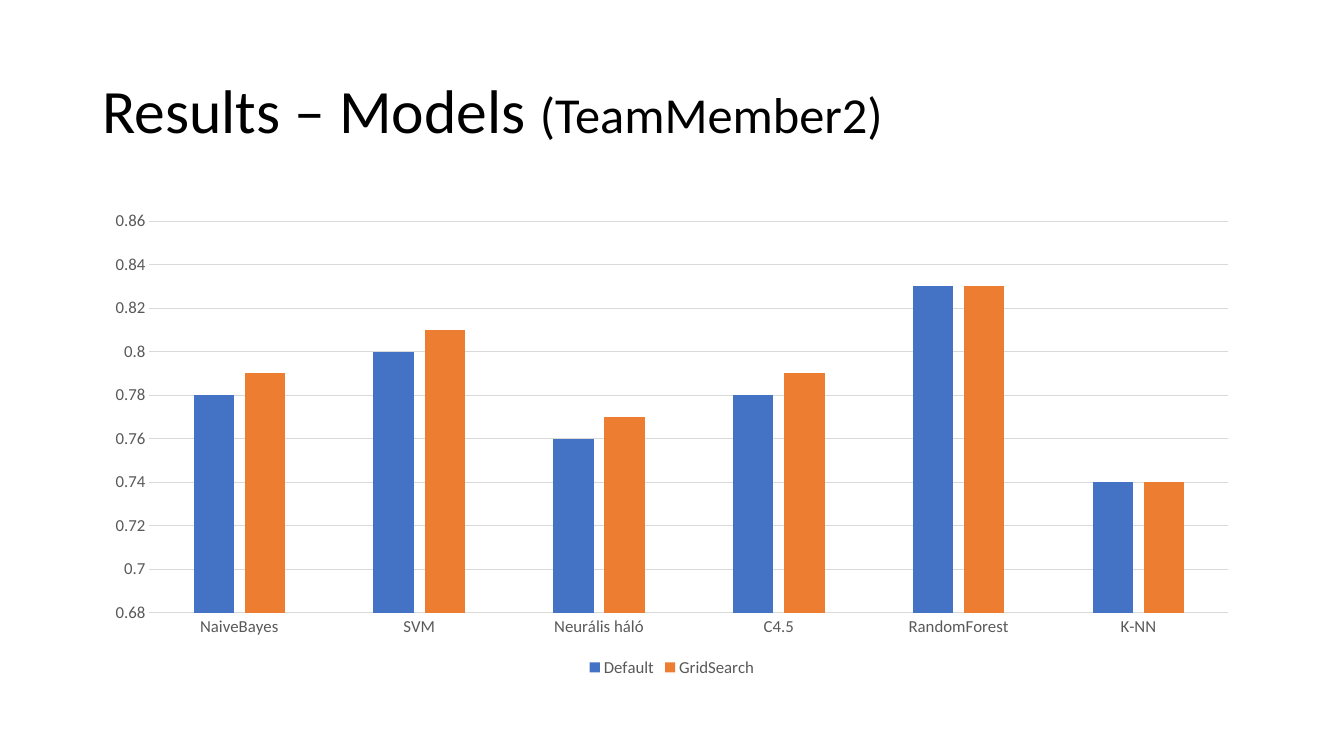
from pptx import Presentation
from pptx.chart.data import CategoryChartData
from pptx.dml.color import RGBColor
from pptx.enum.chart import XL_CHART_TYPE, XL_LEGEND_POSITION, XL_TICK_MARK
from pptx.enum.text import MSO_ANCHOR
from pptx.util import Cm, Pt

COLUMNS = XL_CHART_TYPE.COLUMN_CLUSTERED
BOTTOM = XL_LEGEND_POSITION.BOTTOM
NO_TICK = XL_TICK_MARK.NONE
MIDDLE = MSO_ANCHOR.MIDDLE

LEFT, WIDTH = 2.33, 29.21
MODELS = ["NaiveBayes", "SVM", "Neurális háló", "C4.5", "RandomForest", "K-NN"]
SCORES = [
    ("Default", "4472C4", [0.78, 0.8, 0.76, 0.78, 0.83, 0.74]),
    ("GridSearch", "ED7D31", [0.79, 0.81, 0.77, 0.79, 0.83, 0.74]),
]


def color(code):
    return RGBColor.from_string(code)


class Deck:
    face = "Calibri"
    ink, label, rule = "000000", "595959", "D9D9D9"

    def __init__(self, slide):
        self.slide = slide

    def style(self, font, size, code):
        font.name = self.face
        font.size = Pt(size)
        font.color.rgb = color(code)

    def line(self, fmt):
        fmt.line.color.rgb = color(self.rule)
        fmt.line.width = Pt(0.75)

    def title(self, box, runs):
        frame = self.slide.shapes.add_textbox(*map(Cm, box)).text_frame
        frame.word_wrap = True
        frame.vertical_anchor = MIDDLE
        para = frame.paragraphs[0]
        para.line_spacing = 0.9
        for text, size in runs:
            run = para.add_run()
            run.text = text
            self.style(run.font, size, self.ink)

    def chart(self, box, names, rows):
        data = CategoryChartData()
        data.categories = names
        for name, _, values in rows:
            data.add_series(name, values)
        chart = self.slide.shapes.add_chart(COLUMNS, *map(Cm, box), data).chart
        chart.has_title = False
        self.style(chart.font, 10, self.ink)

        # Columns
        plot = chart.plots[0]
        plot.gap_width, plot.overlap = 219, -27
        plot.vary_by_categories = False
        for series, (_, code, _) in zip(plot.series, rows):
            series.format.fill.solid()
            series.format.fill.fore_color.rgb = color(code)

        # Axes
        for axis in (chart.category_axis, chart.value_axis):
            axis.major_tick_mark = axis.minor_tick_mark = NO_TICK
            self.style(axis.tick_labels.font, 12, self.label)
        self.line(chart.category_axis.format)
        scale = chart.value_axis
        scale.minimum_scale, scale.maximum_scale = 0.68, 0.86
        scale.major_unit = 0.02
        scale.format.line.fill.background()
        self.line(scale.major_gridlines.format)

        # Legend
        chart.has_legend = True
        chart.legend.position = BOTTOM
        chart.legend.include_in_layout = False
        self.style(chart.legend.font, 12, self.label)


def main():
    prs = Presentation()
    prs.slide_width, prs.slide_height = Cm(33.87), Cm(19.05)
    deck = Deck(prs.slides.add_slide(prs.slide_layouts[6]))

    # Heading
    deck.title((LEFT, 1.01, WIDTH, 3.68),
               [("Results – Models ", 44), ("(TeamMember2)", 36)])

    # Model scores
    deck.chart((LEFT, 5.08, WIDTH, 12.09), MODELS, SCORES)
    prs.save("out.pptx")


if __name__ == "__main__":
    main()
